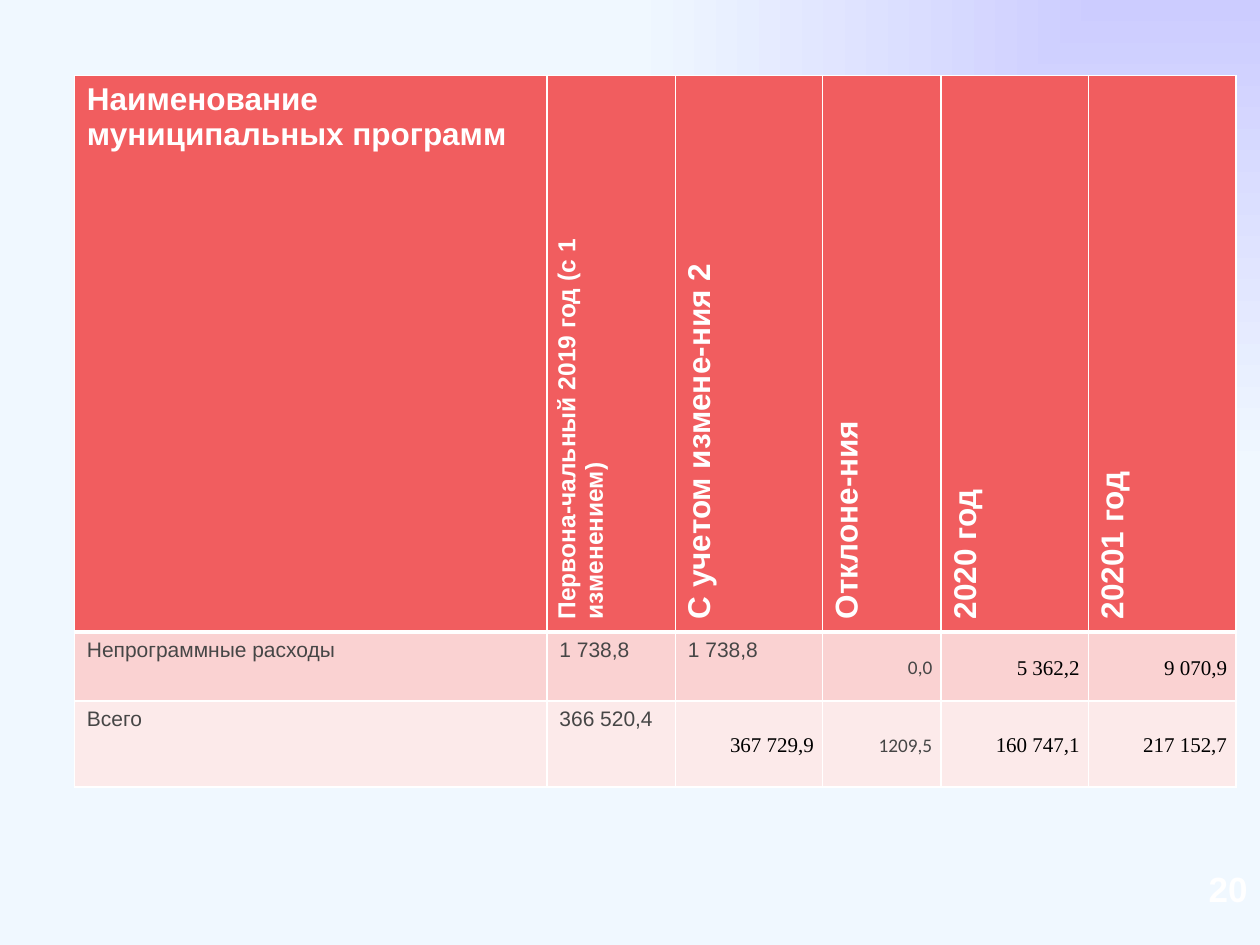
"""Build a slide with a table of municipal programme spending."""
from lxml.etree import SubElement
from pptx import Presentation
from pptx.dml.color import RGBColor
from pptx.enum.text import MSO_ANCHOR, PP_ALIGN
from pptx.oxml.ns import qn
from pptx.util import Inches, Pt

COLORS = {
    "glow": "CCCCFF", "sky": "F0F8FF", "white": "FFFFFF", "black": "000000",
    "header": "F15D5F", "odd": "FAD2D2", "even": "FCEAEA", "gray": "464646",
}
STYLES = {
    "head": ("Arial", 18, "white"),
    "head_small": ("Arial", 14, "white"),
    "label": ("Arial", 12, "gray"),
    "change": ("Calibri", 11, "gray"),
    "amount": ("Times New Roman", 12, "black"),
}
ROWS = [
    ("header", 2.03, [
        ("Наименование муниципальных программ", "head"),
        ("Первона-чальный 2019 год (с 1 изменением)", "head_small"),
        ("С учетом измене-ния 2", "head"),
        ("Отклоне-ния", "head"),
        ("2020 год", "head"),
        ("20201 год", "head"),
    ]),
    ("odd", 0.55, [
        ("Непрограммные расходы", "label"), ("1 738,8", "label"),
        ("1 738,8", "label"), ("0,0", "change"),
        ("5 362,2", "amount"), ("9 070,9", "amount"),
    ]),
    ("even", 0.68, [
        ("Всего", "label"), ("366 520,4", "label"),
        ("367 729,9", "amount"), ("1209,5", "change"),
        ("160 747,1", "amount"), ("217 152,7", "amount"),
    ]),
]
COLUMNS = [3.75, 1.02, 1.17, 0.94, 1.17, 1.17]
LEFT, TOP = 0.59, 0.6
PAGE_NUMBER = "20"


def rgb(name):
    return RGBColor.from_string(COLORS[name])


def set_font(p, name, size, color, bold):
    for r in p.runs:
        r.font.name, r.font.size, r.font.bold = name, Pt(size), bold
        r.font.color.rgb = rgb(color)


def set_background(slide):
    fill = slide.background.fill
    fill.gradient()
    for stop, name, position in zip(fill.gradient_stops, ("glow", "sky"), (0, 1)):
        stop.color.rgb = rgb(name)
        stop.position = position
    grad = next(slide.element.iter(qn("a:gradFill")))
    grad.remove(grad.find(qn("a:lin")))
    shade = SubElement(grad, qn("a:path"), {"path": "rect"})
    SubElement(shade, qn("a:fillToRect"), {"l": "100000", "b": "100000"})


def set_borders(cell, top, bottom):
    tc_pr = cell._tc.get_or_add_tcPr()
    for side, width in (("L", 1), ("R", 1), ("T", top), ("B", bottom)):
        line = SubElement(tc_pr, qn(f"a:ln{side}"), {"w": str(Pt(width))})
        solid = SubElement(line, qn("a:solidFill"))
        SubElement(solid, qn("a:srgbClr"), {"val": COLORS["white"]})


def fill_cell(cell, text, style, row, col, shade):
    set_borders(cell, 3 if row == 1 else 1, 3 if row == 0 else 1)
    cell.fill.solid()
    cell.fill.fore_color.rgb = rgb(shade)
    cell.text_frame.text = text
    p = cell.text_frame.paragraphs[0]
    set_font(p, *STYLES[style], row == 0)
    if row == 0 and col > 0:
        cell._tc.get_or_add_tcPr().set("vert", "vert270")
    if style in ("change", "amount"):
        cell.vertical_anchor = MSO_ANCHOR.MIDDLE
        cell.margin_left = cell.margin_right = Inches(0.07)
        cell.margin_top = cell.margin_bottom = 0
        p.alignment, p.line_spacing = PP_ALIGN.RIGHT, 1.15


def add_spending_table(slide):
    height = sum(h for _, h, _ in ROWS)
    table = slide.shapes.add_table(
        len(ROWS), len(COLUMNS), Inches(LEFT), Inches(TOP),
        Inches(sum(COLUMNS)), Inches(height)).table
    for column, width in zip(table.columns, COLUMNS):
        column.width = Inches(width)
    for row, (shade, h, cells) in enumerate(ROWS):
        table.rows[row].height = Inches(h)
        for col, (text, style) in enumerate(cells):
            fill_cell(table.cell(row, col), text, style, row, col, shade)


def add_page_number(slide):
    sp = slide.shapes.add_textbox(Inches(9), Inches(6.8), Inches(1), Inches(0.5))
    tf = sp.text_frame
    tf.word_wrap = True
    tf.vertical_anchor = MSO_ANCHOR.MIDDLE
    tf.text = PAGE_NUMBER
    p = tf.paragraphs[0]
    p.alignment = PP_ALIGN.RIGHT
    set_font(p, "Arial", 20, "white", True)


def main():
    prs = Presentation()
    prs.slide_width, prs.slide_height = Inches(10), Inches(7.5)
    slide = prs.slides.add_slide(prs.slide_layouts[6])
    set_background(slide)
    add_spending_table(slide)
    add_page_number(slide)
    prs.save("out.pptx")


if __name__ == "__main__":
    main()
